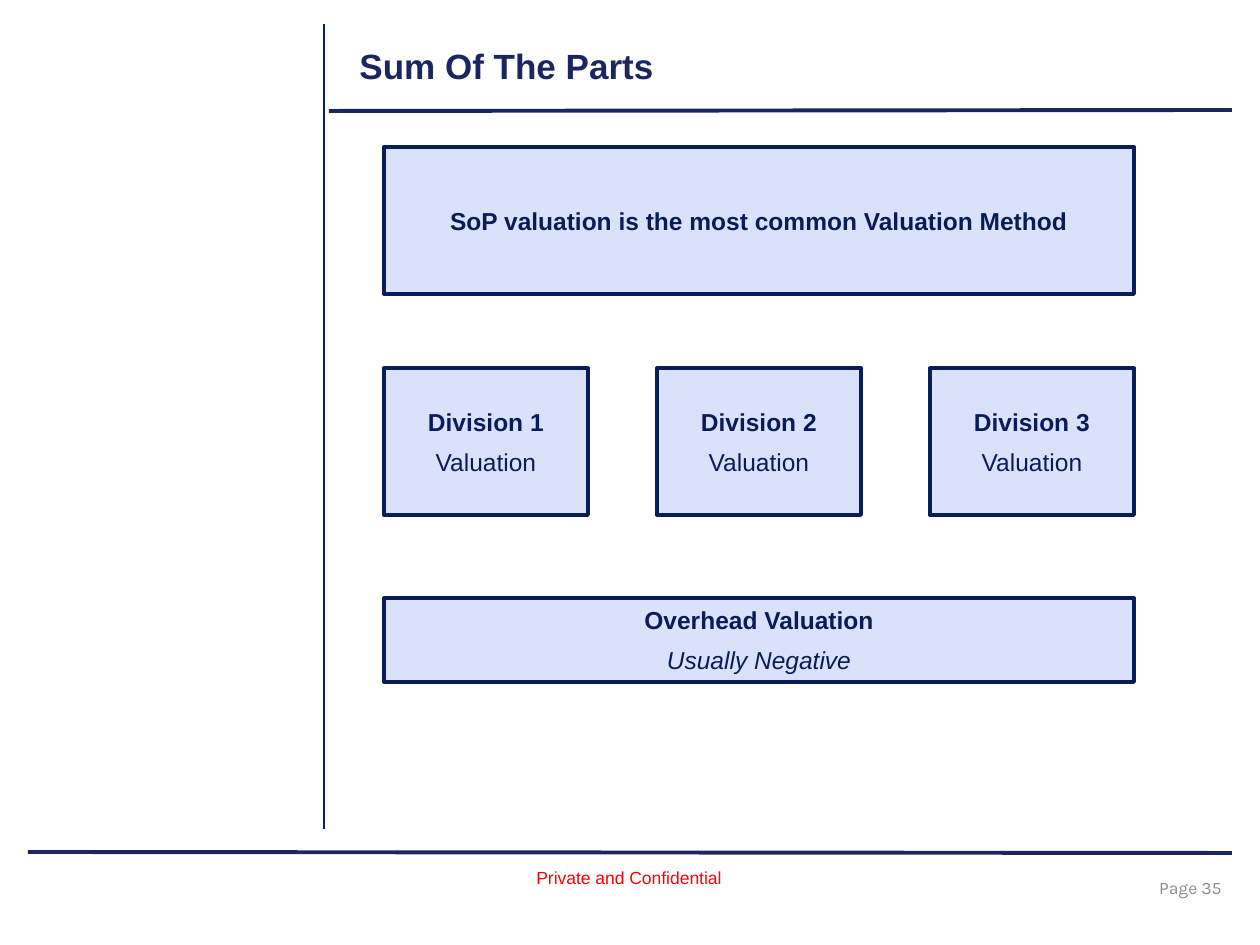
"""Build the Sum Of The Parts valuation slide."""
from lxml import etree
from pptx import Presentation, util as u
from pptx.dml.color import RGBColor
from pptx.enum import shapes, text
from pptx.oxml.ns import qn

COLORS = {
    "rule": "1B265F", "divider": "002368", "title": "1B265F", "page": "8C8C8C",
    "notice": "FF0000", "fill": "DAE2FB", "ink": "091C5A",
}
RULES = [
    (28, 852, 1232, 853, "rule", 2.25),
    (329, 111, 1232, 110, "rule", 2.25),
    (324, 24, 324, 108, "divider", 0.75),
    (324, 32, 324, 829, "divider", 0.75),
]
LABELS = [
    ("Page 35 ", (944, 863, 294, 50), "Karla", 10, "page", False, "RIGHT", "MIDDLE", True),
    ("Private and Confidential", (524, 861, 212, 34), "Arial", 10, "notice", False, "LEFT", "TOP", False),
    ("Sum Of The Parts", (347, 38, 850, 67), "Arial", 20, "title", True, "LEFT", "TOP", True),
]
LEFT, WIDTH = 384, 750
DIVISION_WIDTH = 204
ROWS = [
    (147, 147, WIDTH, [["SoP valuation is the most common Valuation Method"]]),
    (368, 147, DIVISION_WIDTH, [[f"Division {n}", "Valuation"] for n in (1, 2, 3)]),
    (598, 84, WIDTH, [["Overhead Valuation", "Usually Negative"]]),
]
ITALIC_LINES = {"Usually Negative"}


def px(n):
    return u.Emu(round(n * 914400 / 126))


def rgb(name):
    return RGBColor.from_string(COLORS[name])


def style(p, font, size, color, bold, align):
    p.alignment = text.PP_ALIGN[align]
    for r in p.runs:
        r.font.name, r.font.size, r.font.bold = font, u.Pt(size), bold
        r.font.color.rgb = rgb(color)


def add_rule(s, x1, y1, x2, y2, color, weight):
    c = s.shapes.add_connector(shapes.MSO_CONNECTOR.STRAIGHT, px(x1), px(y1), px(x2), px(y2))
    c.line.color.rgb, c.line.width = rgb(color), u.Pt(weight)
    etree.SubElement(c._element.spPr, qn("a:effectLst"))


def add_label(s, words, box, font, size, color, bold, align, anchor, wrap):
    tf = s.shapes.add_textbox(*map(px, box)).text_frame
    tf.word_wrap, tf.vertical_anchor = wrap, text.MSO_ANCHOR[anchor]
    tf.text = words
    style(tf.paragraphs[0], font, size, color, bold, align)


def add_box(s, x, y, w, h, lines):
    sp = s.shapes.add_shape(shapes.MSO_SHAPE.RECTANGLE, px(x), px(y), px(w), px(h))
    sp.shadow.inherit = False
    sp.fill.solid()
    sp.fill.fore_color.rgb = rgb("fill")
    sp.line.color.rgb, sp.line.width = rgb("ink"), u.Pt(2.25)
    tf = sp.text_frame
    tf.word_wrap, tf.vertical_anchor = True, text.MSO_ANCHOR.MIDDLE
    tf.text = "\n".join(lines)
    for i, p in enumerate(tf.paragraphs):
        style(p, "Arial", 14, "ink", i == 0, "CENTER")
        p.space_after = u.Pt(6)
        p.runs[0].font.italic = p.text in ITALIC_LINES


def main():
    prs = Presentation()
    prs.slide_width, prs.slide_height = u.Inches(10), u.Inches(7.5)
    s = prs.slides.add_slide(prs.slide_layouts[6])
    for rule in RULES:
        add_rule(s, *rule)
    for label in LABELS:
        add_label(s, *label)
    for top, height, width, boxes in ROWS:
        step = (WIDTH - width) / max(len(boxes) - 1, 1)
        for i, lines in enumerate(boxes):
            add_box(s, LEFT + i * step, top, width, height, lines)
    prs.save("out.pptx")


if __name__ == "__main__":
    main()
